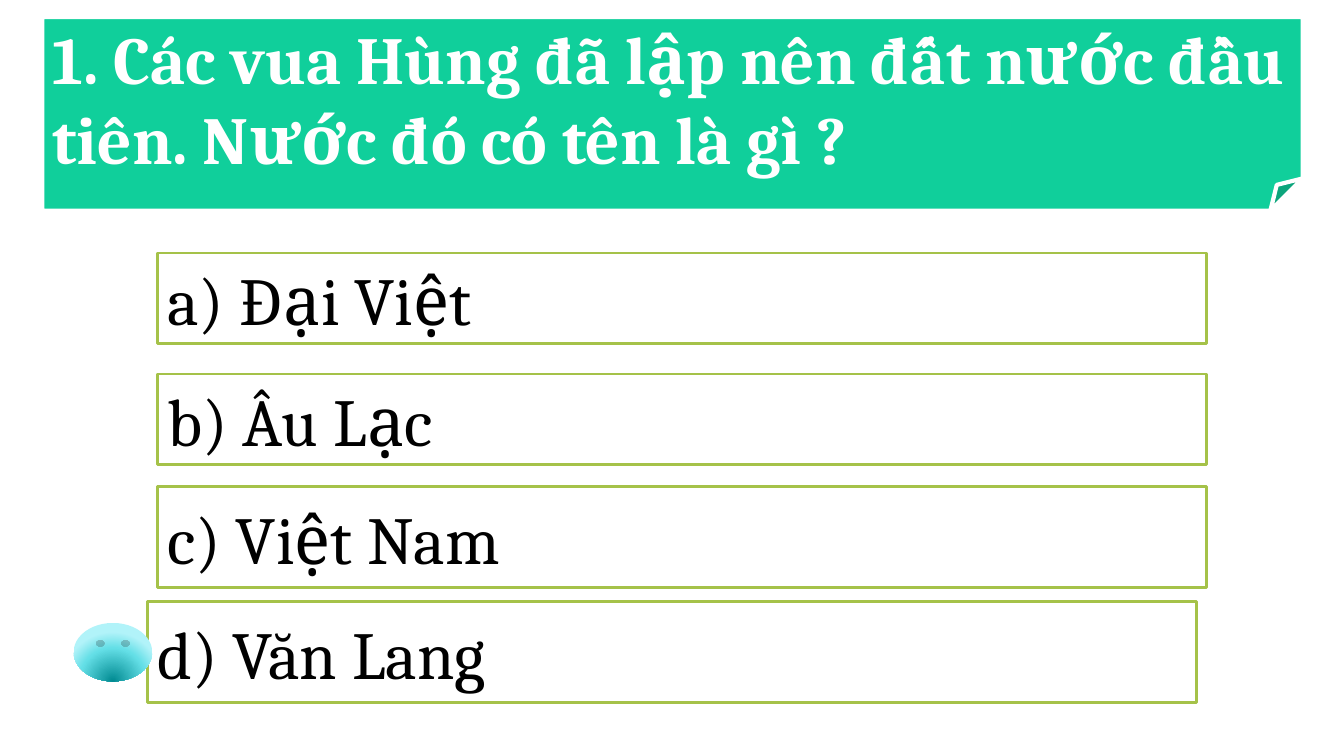
from lxml import etree
from pptx import Presentation
from pptx.dml.color import RGBColor
from pptx.enum import shapes, text
from pptx.oxml import ns
from pptx.util import Inches, Pt

COLORS = {
    "banner": "10CF9B", "white": "FFFFFF", "black": "000000", "border": "A5C249",
    "face_dark": "008A91", "face_mid": "64DFE7", "face_light": "B1F3F9",
}
FONT = "Cambria"


def rgb(name):
    return RGBColor.from_string(COLORS[name])


def add_box(s, kind, box, fill, line, width):
    sp = s.shapes.add_shape(kind, *map(Inches, box))
    sp.shadow.inherit = False
    sp.fill.solid()
    sp.fill.fore_color.rgb = rgb(fill)
    sp.line.color.rgb = rgb(line)
    sp.line.width = Pt(width)
    return sp


def write(sp, words, color, bold=False):
    tf = sp.text_frame
    tf.word_wrap = True
    tf.auto_size = text.MSO_AUTO_SIZE.NONE
    tf.vertical_anchor = text.MSO_ANCHOR.MIDDLE
    p = tf.paragraphs[0]
    p.alignment = text.PP_ALIGN.LEFT
    r = p.add_run()
    r.text = words
    r.font.name = FONT
    r.font.size = Pt(48)
    r.font.bold = bold
    r.font.color.rgb = rgb(color)


def add_question(s, box, words):
    """Folded banner with the title on the part above its fold."""
    add_box(s, shapes.MSO_SHAPE.FOLDED_CORNER, box, "banner", "white", 3)
    left, top, width, height = box
    title = s.shapes.title
    title.left, title.top = Inches(left), Inches(top)
    title.width, title.height = Inches(width), Inches(height * 5 / 6)
    # Bring the title in front of the banner
    s.shapes._spTree.append(title._element)
    write(title, words, "white", bold=True)


def add_answer(s, box, words):
    sp = add_box(s, shapes.MSO_SHAPE.RECTANGLE, box, "white", "border", 2)
    write(sp, words, "black")


def add_smiley(s, box):
    """Smiley marking the right answer, shaded from below its lower edge."""
    sp = s.shapes.add_shape(shapes.MSO_SHAPE.SMILEY_FACE, *map(Inches, box))
    sp.shadow.inherit = False
    sp.line.fill.background()
    sp.fill.gradient()
    grad = sp._element.spPr.find(ns.qn("a:gradFill"))
    for child in list(grad):
        grad.remove(child)
    stops = etree.SubElement(grad, ns.qn("a:gsLst"))
    for pos, name in ((0, "face_dark"), (68, "face_mid"), (100, "face_light")):
        stop = etree.SubElement(stops, ns.qn("a:gs"), pos=str(pos * 1000))
        etree.SubElement(stop, ns.qn("a:srgbClr"), val=COLORS[name])
    circle = etree.SubElement(grad, ns.qn("a:path"), {"path": "circle"})
    etree.SubElement(circle, ns.qn("a:fillToRect"),
                     l="50000", t="130000", r="50000", b="-30000")


def main():
    prs = Presentation()
    prs.slide_width, prs.slide_height = Inches(13.33), Inches(7.5)
    s = prs.slides.add_slide(prs.slide_layouts[5])

    add_question(s, (0.42, 0.17, 12.5, 1.92),
                 "1. Các vua Hùng đã lập nên đất nước đầu tiên. "
                 "Nước đó có tên là gì ?")
    answers = (
        ("a) Đại Việt", 1.56, 2.51, 0.9),
        ("b) Âu Lạc", 1.56, 3.71, 0.9),
        ("c) Việt Nam", 1.56, 4.83, 1),
        ("d) Văn Lang", 1.46, 5.97, 1),
    )
    for words, left, top, height in answers:
        add_answer(s, (left, top, 10.41, height), words)
    add_smiley(s, (0.73, 6.18, 0.78, 0.58))

    prs.save("out.pptx")


if __name__ == "__main__":
    main()
